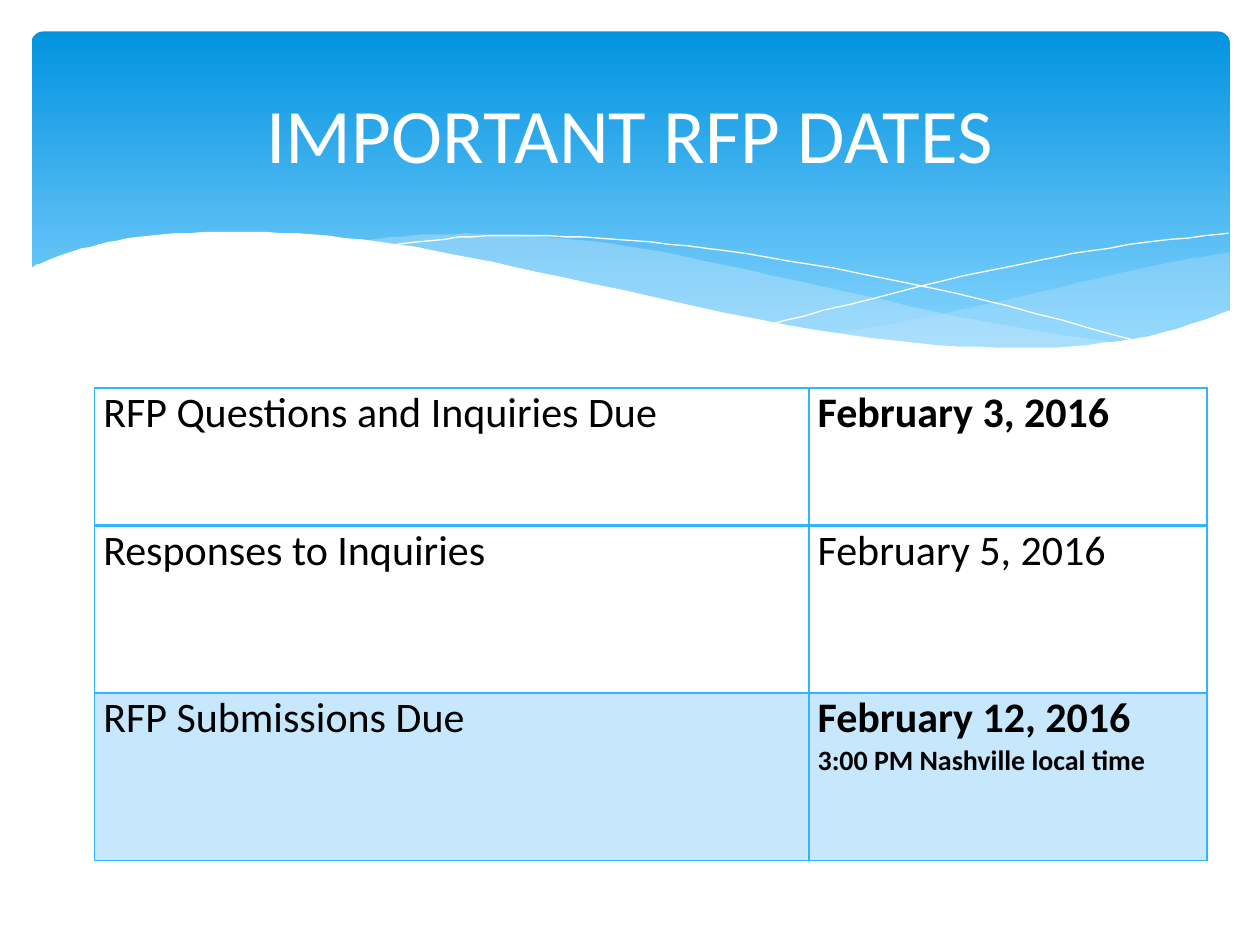
"""Build the slide of important RFP dates: a wave banner, a title and a table."""
from typing import NamedTuple, Optional

from lxml import etree
from pptx import Presentation
from pptx.dml.color import RGBColor
from pptx.enum.shapes import MSO_SHAPE
from pptx.enum.text import MSO_ANCHOR, PP_ALIGN
from pptx.oxml.ns import qn
from pptx.util import Emu, Pt

ROUNDED = MSO_SHAPE.ROUNDED_RECTANGLE
MIDDLE = MSO_ANCHOR.MIDDLE
CENTER = PP_ALIGN.CENTER

EMU_PER_PX = 9144
STEPS = 8
FONT = "Calibri"
WHITE, BLACK, SKY, PALE = "FFFFFF", "000000", "31B6FD", "C6E7FC"

Knots = list[tuple[float, float]]


class Wave(NamedTuple):
    edges: list[Knots]
    fill: Optional[str] = None
    opacity: int = 100


class Line(NamedTuple):
    text: str
    size: int = 24
    bold: bool = False


class Milestone(NamedTuple):
    event: str
    date: list[Line]
    height: int
    fill: Optional[str] = None
    top_border: int = 1
    bottom_border: int = 1


WAVES = [
    Wave([[(976, 200), (906, 213), (832, 230), (729, 253), (661, 265)],
          [(661, 265), (745, 275), (814, 278), (889, 272), (976, 247)]], PALE, 29),
    Wave([[(893, 273), (775, 254), (629, 222), (514, 198), (420, 187), (344, 186),
           (286, 191)],
          [(286, 191), (404, 211), (566, 248), (695, 270), (796, 278), (893, 273)]],
         PALE, 40),
    Wave([[(309, 195), (387, 187), (489, 190), (608, 204), (760, 233), (907, 272)]]),
    Wave([[(613, 257), (748, 223), (866, 199), (975, 185)]]),
    Wave([[(977, 246), (899, 269), (793, 276), (648, 262), (447, 220), (316, 194),
           (211, 184), (119, 187), (59, 199), (23, 213)],
          [(23, 329), (977, 329)]], WHITE),
]

COLUMNS = [567, 316]
MILESTONES = [
    Milestone("RFP Questions and Inquiries Due",
              [Line("February 3, 2016", bold=True)], 109, bottom_border=2),
    Milestone("Responses to Inquiries",
              [Line("February 5, 2016")], 133, top_border=2),
    Milestone("RFP Submissions Due",
              [Line("February 12, 2016", bold=True),
               Line("3:00 PM Nashville local time", 16, True)], 133, PALE),
]


def px(length: int) -> Emu:
    return Emu(length * EMU_PER_PX)


def rgb(color: str) -> RGBColor:
    return RGBColor.from_string(color)


def spline(a: float, b: float, c: float, d: float, t: float) -> float:
    """Return the Catmull-Rom value between b and c."""
    return b + t / 2 * (c - a + t * (2 * a - 5 * b + 4 * c - d
                                     + t * (3 * (b - c) + d - a)))


def smooth(knots: Knots) -> Knots:
    """Return points along a smooth curve through the knots."""
    padded = [knots[0], *knots, knots[-1]]
    spans = zip(padded, padded[1:], padded[2:], padded[3:])
    curve = [tuple(spline(*values, step / STEPS) for values in zip(*span))
             for span in spans for step in range(STEPS)]
    return curve + [knots[-1]]


def draw_banner(shapes) -> None:
    banner = shapes.add_shape(ROUNDED, px(25), px(25), px(951), px(270))
    banner.shadow.inherit = False
    banner.adjustments[0] = 0.034
    banner.line.fill.background()
    banner.fill.gradient()
    banner.fill.gradient_angle = 270
    stops = zip(banner.fill.gradient_stops, [(0, "0293E0"), (0.9, "83D3FE")])
    for stop, (position, color) in stops:
        stop.position = position
        stop.color.rgb = rgb(color)


def draw_wave(shapes, wave: Wave) -> None:
    start, *rest = [point for edge in wave.edges for point in smooth(edge)]
    builder = shapes.build_freeform(*start, scale=EMU_PER_PX)
    builder.add_line_segments(rest, close=wave.fill is not None)
    outline = builder.convert_to_shape()
    outline.shadow.inherit = False
    if wave.fill is None:
        outline.fill.background()
        outline.line.color.rgb = rgb(WHITE)
        outline.line.width = Pt(0)
        return
    outline.line.fill.background()
    outline.fill.solid()
    outline.fill.fore_color.rgb = rgb(wave.fill)
    if wave.opacity < 100:
        color = outline._element.spPr.find(f"{qn('a:solidFill')}/{qn('a:srgbClr')}")
        etree.SubElement(color, qn("a:alpha"), val=str(wave.opacity * 1000))


def write_lines(frame, lines: list[Line], color: str) -> None:
    for index, line in enumerate(lines):
        paragraph = frame.add_paragraph() if index else frame.paragraphs[0]
        paragraph.text = line.text
        font = paragraph.font
        font.name, font.size, font.bold = FONT, Pt(line.size), line.bold
        font.color.rgb = rgb(color)


def draw_title(shapes) -> None:
    title = shapes.add_textbox(px(50), px(37), px(900), px(137)).text_frame
    title.word_wrap = True
    title.vertical_anchor = MIDDLE
    write_lines(title, [Line("IMPORTANT RFP DATES", 44)], WHITE)
    title.paragraphs[0].alignment = CENTER


def add_borders(cell, top: int, bottom: int) -> None:
    properties = cell._tc.get_or_add_tcPr()
    for side, width in (("L", 1), ("R", 1), ("T", top), ("B", bottom)):
        border = etree.SubElement(properties, qn(f"a:ln{side}"), w=str(int(Pt(width))))
        fill = etree.SubElement(border, qn("a:solidFill"))
        etree.SubElement(fill, qn("a:srgbClr"), val=SKY)


def draw_cell(cell, lines: list[Line], milestone: Milestone) -> None:
    cell.margin_left = cell.margin_right = px(7)
    cell.margin_top = cell.margin_bottom = 0
    write_lines(cell.text_frame, lines, BLACK)
    add_borders(cell, milestone.top_border, milestone.bottom_border)
    if milestone.fill:
        cell.fill.solid()
        cell.fill.fore_color.rgb = rgb(milestone.fill)
    else:
        cell.fill.background()


def draw_schedule(shapes) -> None:
    height = sum(milestone.height for milestone in MILESTONES)
    schedule = shapes.add_table(len(MILESTONES), len(COLUMNS), px(75), px(308),
                                px(sum(COLUMNS)), px(height)).table
    schedule.first_row = schedule.horz_banding = False
    for column, width in zip(schedule.columns, COLUMNS):
        column.width = px(width)
    for row, milestone in zip(schedule.rows, MILESTONES):
        row.height = px(milestone.height)
        for cell, lines in zip(row.cells, ([Line(milestone.event)], milestone.date)):
            draw_cell(cell, lines, milestone)


def main() -> None:
    deck = Presentation()
    deck.slide_width, deck.slide_height = px(1000), px(750)
    shapes = deck.slides.add_slide(deck.slide_layouts[6]).shapes
    draw_banner(shapes)
    for wave in WAVES:
        draw_wave(shapes, wave)
    draw_title(shapes)
    draw_schedule(shapes)
    deck.save("out.pptx")


if __name__ == "__main__":
    main()
